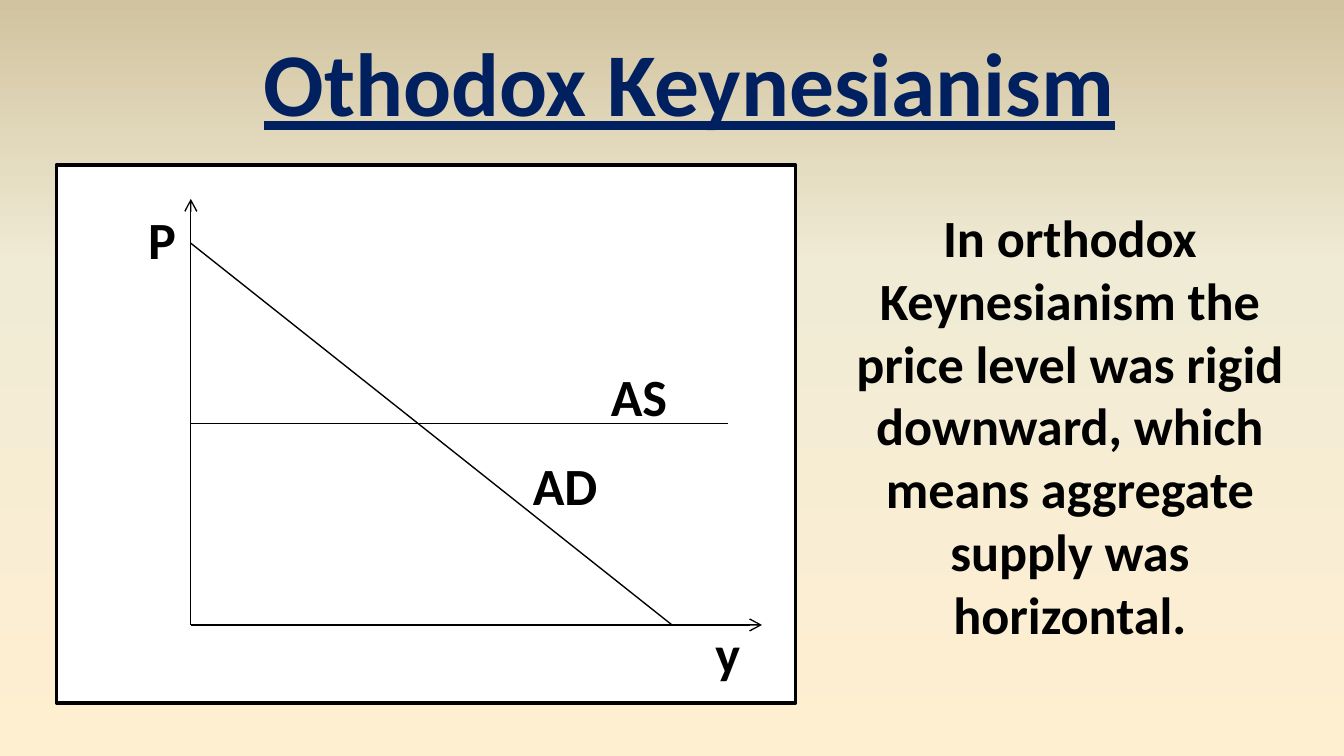
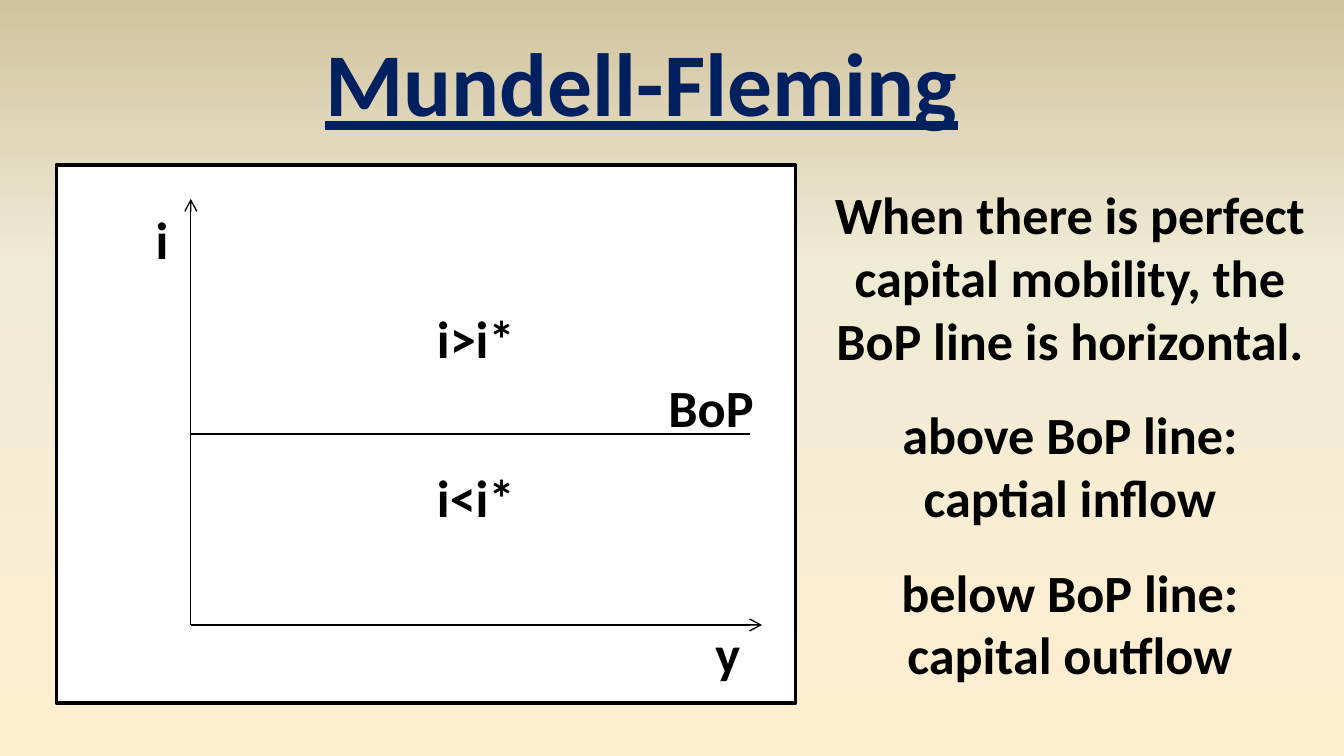
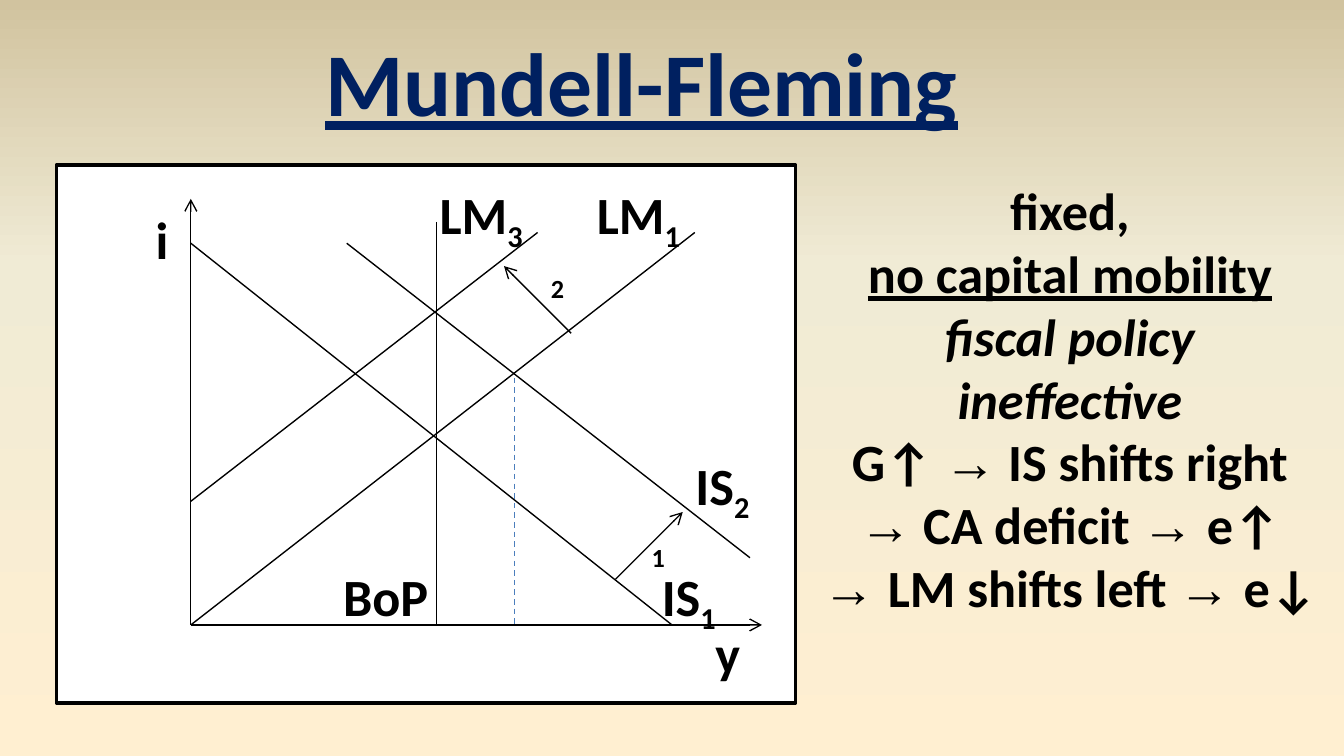
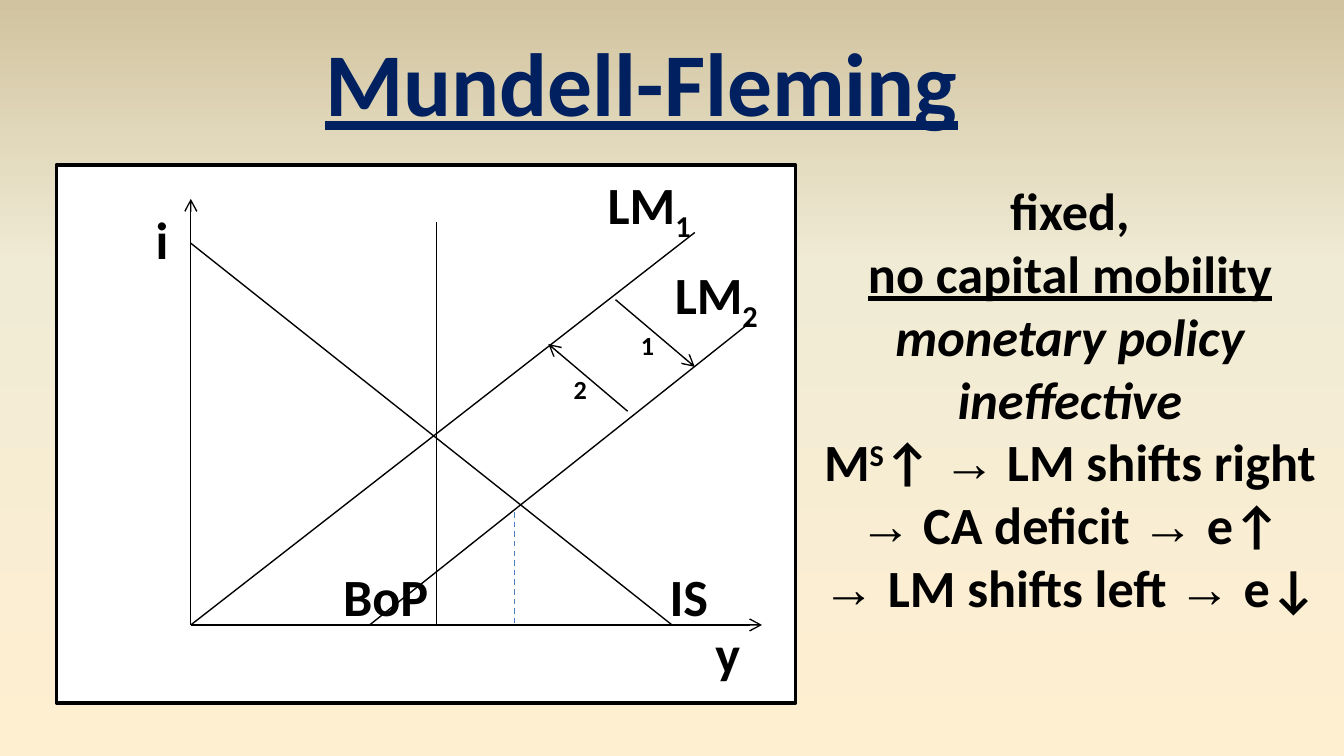
from copy import deepcopy
from dataclasses import dataclass

from lxml import etree
from pptx import Presentation
from pptx import util as u
from pptx.dml.color import RGBColor
from pptx.enum import dml, shapes, text
from pptx.oxml.ns import qn


@dataclass(frozen=True)
class Theme:
    font: str = "Calibri"
    arrow_font: str = "Times New Roman"
    navy: str = "002060"
    ink: str = "000000"
    paper: str = "FFFFFF"
    guide: str = "4B7EBC"
    sky: tuple = ((0, "FFEFD1"), (0.65, "F0EBD5"), (1, "D1C39F"))
    head: int = 48
    body: int = 28
    small: int = 14
    gap: int = 17
    frame: float = 2
    thin: float = 0.75


T = Theme()
BOX = (0.42, 1.23, 5.5, 4)
SIDE = (5.92, 1.28, 4.08, 3.4)
HEAD = (2.3, 0.15, 4.95, 0.91)

ORIGIN = (1, 3.42)
AXES = [(*ORIGIN, 1, 0.25, "arrow"), (*ORIGIN, 5.25, 3.42, "arrow")]
FALL = (1, 0.58, 4.58, 3.42, "line")
RISE = (4.75, 0.5, *ORIGIN, "line")
WALL = (2.83, 0.42, 2.83, 3.42, "line")
BOP = (["BoP"], 1.91, 2.92, 1.08)


def rgb(code):
    return RGBColor.from_string(code)


def inches(*sizes):
    return [u.Inches(size) for size in sizes]


def paint_back(master):
    fill = master.background.fill
    fill.gradient()
    fill.gradient_angle = 90
    stops = master.element.find(".//" + qn("a:gsLst"))
    stops.insert(1, deepcopy(stops[0]))
    for stop, (spot, code) in zip(fill.gradient_stops, T.sky):
        stop.position = spot
        stop.color.rgb = rgb(code)


def style(para, size, color):
    para.alignment = text.PP_ALIGN.CENTER
    font = para.font
    font.name, font.size, font.bold = T.font, u.Pt(size), True
    font.color.rgb = rgb(color)


def add_parts(para, parts):
    shifts = {"_": "-25000", "^": "30000"}
    for part in parts:
        shift = shifts.get(part[0])
        run = para.add_run()
        run.text = part[1:] if shift else part
        if shift:
            run._r.get_or_add_rPr().set("baseline", shift)
        if part.startswith("→"):
            run.font.name = T.arrow_font


def add_title(slide, words, box):
    title = slide.shapes.title
    title.left, title.top, title.width, title.height = inches(*box)
    frame = title.text_frame
    frame.text = words
    frame.word_wrap = False
    frame.auto_size = text.MSO_AUTO_SIZE.SHAPE_TO_FIT_TEXT
    frame.vertical_anchor = text.MSO_ANCHOR.TOP
    para = frame.paragraphs[0]
    style(para, T.head, T.navy)
    para.font.underline = True


def add_text(parent, box, lines, size):
    frame = parent.add_textbox(*inches(*box)).text_frame
    frame.word_wrap = True
    frame.auto_size = text.MSO_AUTO_SIZE.SHAPE_TO_FIT_TEXT
    for row, (parts, look) in enumerate(lines):
        para = frame.add_paragraph() if row else frame.paragraphs[0]
        style(para, size, T.ink)
        if look == "under":
            para.font.underline = True
        elif look == "slant":
            para.font.italic = True
        elif look == "gap":
            para.space_before = u.Pt(T.gap)
        add_parts(para, parts)


def add_line(parent, start, end, kind):
    line = parent.add_connector(
        shapes.MSO_CONNECTOR.STRAIGHT, *inches(*start, *end))
    line.line.width = u.Pt(T.thin)
    line.line.color.rgb = rgb(T.guide if kind == "dash" else T.ink)
    props = line.element.spPr
    if kind == "dash":
        line.line.dash_style = dml.MSO_LINE.DASH
    elif kind == "arrow":
        etree.SubElement(props.find(qn("a:ln")), qn("a:tailEnd"), type="arrow")
    etree.SubElement(props, qn("a:effectLst"))


def add_graph(slide, box, price, curves, labels, marks=()):
    left, top = box[:2]
    group = slide.shapes.add_group_shape().shapes
    panel = group.add_shape(shapes.MSO_SHAPE.RECTANGLE, *inches(*box))
    panel.shadow.inherit = False
    panel.fill.solid()
    panel.fill.fore_color.rgb = rgb(T.paper)
    panel.line.color.rgb = rgb(T.ink)
    panel.line.width = u.Pt(T.frame)
    for x1, y1, x2, y2, kind in AXES + curves:
        add_line(group, (left + x1, top + y1), (left + x2, top + y2), kind)
    names = [([price], 0.41, 0.26, 0.75), (["y"], 4.66, 3.34, 0.67)]
    for parts, x, y, width in names + labels:
        add_text(group, (left + x, top + y, width, 0.57), [(parts, "")], T.body)
    for word, x, y in marks:
        add_text(group, (left + x, top + y, 0.25, 0.34), [([word], "")], T.small)


def chain(policy, cause):
    return [
        (["fixed,"], ""),
        (["no capital mobility"], "under"),
        ([policy], "slant"),
        (["ineffective"], "slant"),
        (cause, ""),
        (["→", " CA deficit ", "→ ", "e↑"], ""),
        (["→ ", "LM shifts left ", "→ ", "e↓"], ""),
    ]


DECK = [
    dict(
        title="Othodox Keynesianism", head=(1.83, 0.15, 6.6, 0.91),
        side=(6.17, 1.48, 3.58, 3.4), price="P",
        lines=[(["In orthodox Keynesianism the price level was rigid downward, "
                 "which means aggregate supply was horizontal."], "")],
        curves=[(1, 1.92, 5, 1.92, "line"), FALL],
        labels=[(["AS"], 4, 1.43, 0.67), (["AD"], 3.41, 2.09, 0.75)],
    ),
    dict(
        side=(5.92, 1.31, 4.08, 3.87),
        lines=[
            (["When there is perfect capital mobility, the BoP line is "
              "horizontal."], ""),
            (["above BoP line:"], "gap"),
            (["captial inflow"], ""),
            (["below BoP line:"], "gap"),
            (["capital outflow"], ""),
        ],
        curves=[(5.16, 2, 1, 2, "line")],
        labels=[(["BoP"], 4.41, 1.51, 0.92), (["i>i*"], 2.66, 1, 0.92),
                (["i<i*"], 2.66, 2.18, 0.92)],
    ),
    dict(
        lines=chain("fiscal policy", ["G↑ ", "→", " IS shifts right"]),
        curves=[RISE, FALL, WALL, (2.16, 0.58, 5.16, 2.92, "line"),
                (3.58, 0.5, 1, 2.5, "line"),
                (4.16, 3.08, 4.66, 2.58, "arrow"),
                (3.83, 1.25, 3.33, 0.75, "arrow"),
                (3.41, 1.58, 3.41, 3.42, "dash")],
        labels=[BOP, (["IS", "_1"], 4.33, 2.92, 0.75),
                (["IS", "_2"], 4.58, 2.09, 0.75),
                (["LM", "_3"], 2.66, 0.08, 1), (["LM", "_1"], 3.83, 0.08, 1)],
        marks=[("2", 3.58, 0.75), ("1", 4.33, 2.75)],
    ),
    dict(
        lines=chain("monetary policy",
                    ["M", "^S", "↑ ", "→", " LM shifts right"]),
        curves=[RISE, FALL, WALL, (5.16, 1.17, 2.33, 3.42, "line"),
                (4.25, 1.83, 3.66, 1.33, "arrow"),
                (4.16, 1, 4.75, 1.5, "arrow"),
                (3.41, 2.58, 3.41, 3.42, "dash")],
        labels=[BOP, (["IS"], 4.33, 2.92, 0.75),
                (["LM", "_2"], 4.41, 0.67, 1), (["LM", "_1"], 3.91, 0, 1)],
        marks=[("1", 4.25, 1.17), ("2", 3.75, 1.5)],
    ),
]


def add_page(deck, lines, curves, labels, marks=(), title="Mundell-Fleming",
             head=HEAD, side=SIDE, price="i"):
    slide = deck.slides.add_slide(deck.slide_layouts.get_by_name("Title Only"))
    add_title(slide, title, head)
    add_text(slide.shapes, side, lines, T.body)
    add_graph(slide, BOX, price, curves, labels, marks)


def main():
    deck = Presentation()
    deck.slide_width = u.Inches(10)
    deck.slide_height = deck.slide_width * 9 // 16
    paint_back(deck.slide_master)
    for page in DECK:
        add_page(deck, **page)
    deck.save("out.pptx")


if __name__ == "__main__":
    main()
